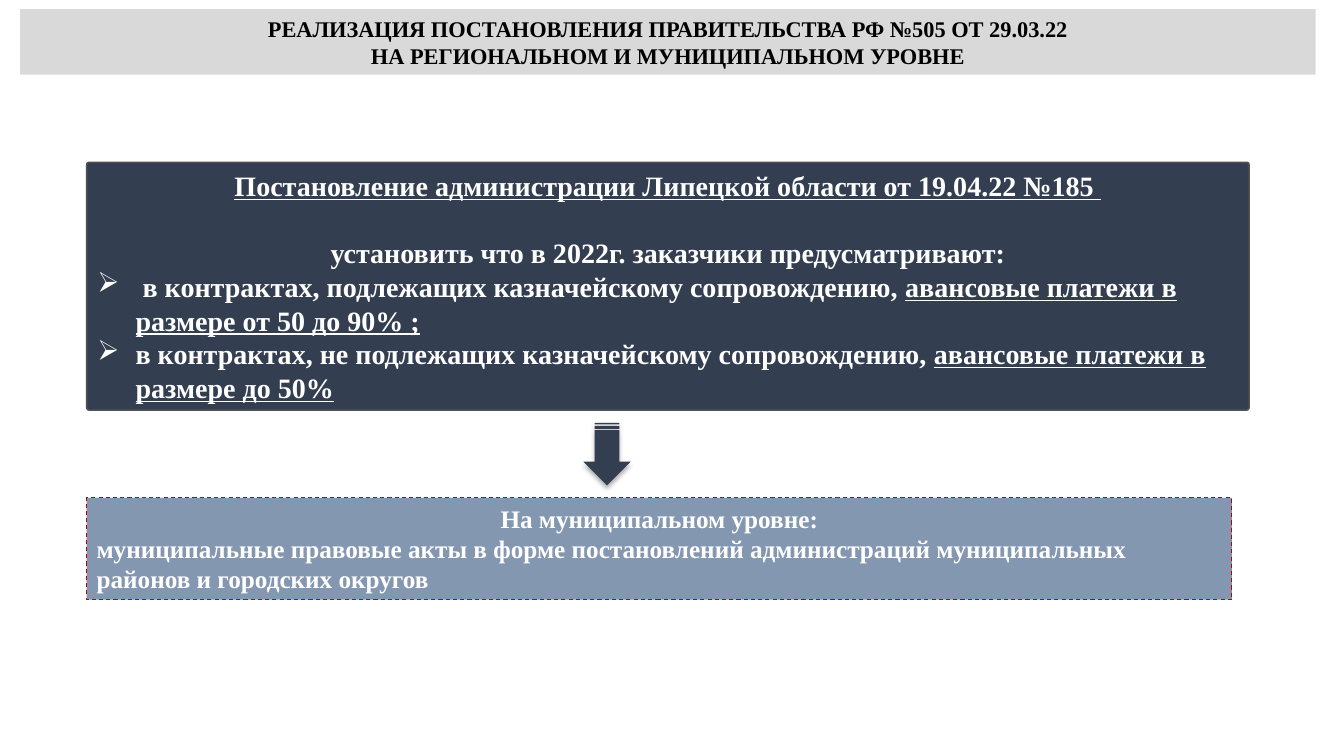
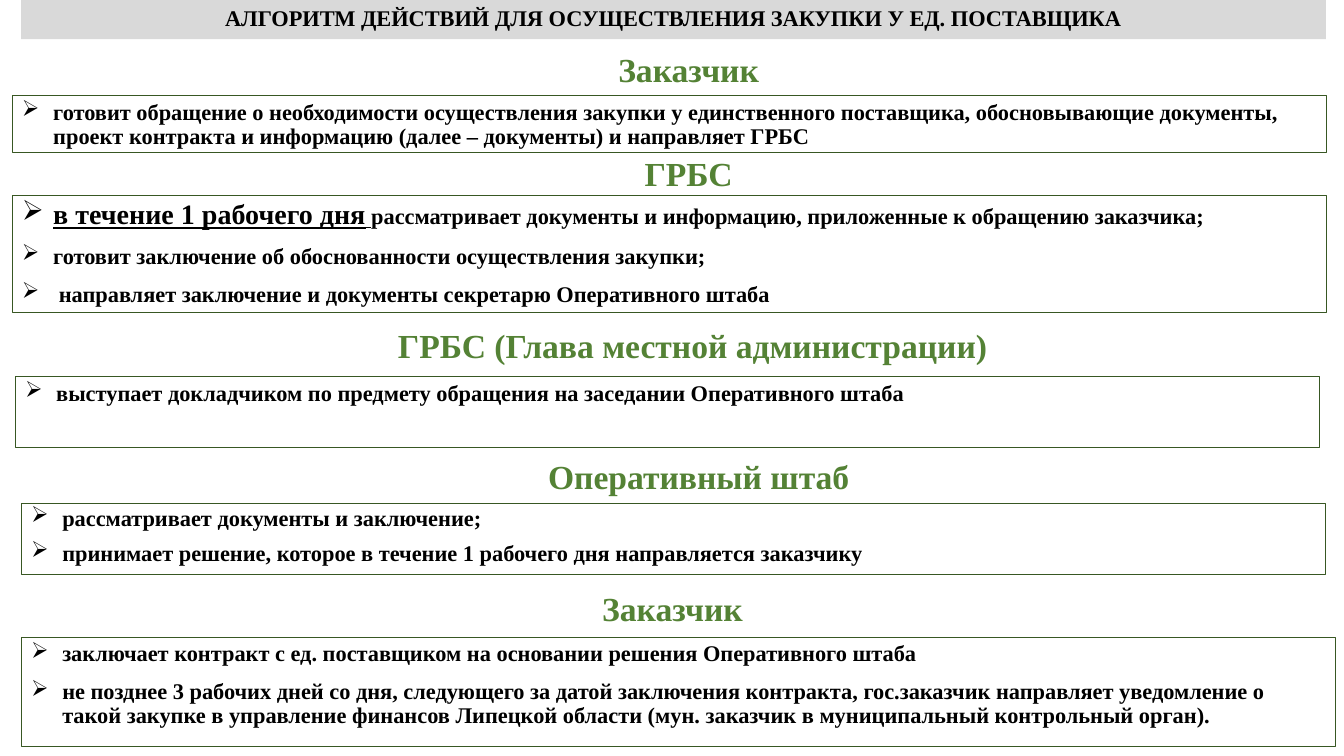
import pptx
import pptx.dml.color
import pptx.enum.dml
import pptx.enum.shapes
import pptx.enum.text
import pptx.oxml.ns
import pptx.util
from lxml import etree

Inches = pptx.util.Inches
Pt = pptx.util.Pt
SHAPES = pptx.enum.shapes.MSO_SHAPE
ALIGN = pptx.enum.text.PP_ALIGN
ANCHOR = pptx.enum.text.MSO_ANCHOR
qn = pptx.oxml.ns.qn

FONT = "Times New Roman"
COLORS = {
    "band": "D9D9D9",
    "text": "000000",
    "light_text": "FFFFFF",
    "decree": "333F50",
    "decree_border": "525252",
    "municipal": "8497B0",
    "municipal_border": "C00000",
    "heading": "548235",
    "step_border": "385723",
}


def rgb(name):
    return pptx.dml.color.RGBColor.from_string(COLORS[name])


# Text
def add_run(paragraph, text, size=16, color="text", underline=False):
    run = paragraph.add_run()
    run.text = text
    run.font.name = FONT
    run.font.size = Pt(size)
    run.font.bold = True
    run.font.underline = underline
    run.font.color.rgb = rgb(color)


def add_bullet(paragraph, indent):
    properties = paragraph._p.get_or_add_pPr()
    properties.set("marL", str(Inches(indent)))
    properties.set("indent", str(-Inches(indent)))
    etree.SubElement(properties, qn("a:buChar")).set("char", "➢")


def add_text(shape, parts, align=ALIGN.LEFT, line_spacing=None,
             space_before=0, indent=None, **run_format):
    """Add a paragraph; parts is a string or a list of (text, run format)."""
    frame = shape.text_frame
    paragraph = frame.paragraphs[0]
    if paragraph.runs:
        paragraph = frame.add_paragraph()
    paragraph.alignment = align
    paragraph.space_before = Pt(space_before)
    if line_spacing:
        paragraph.line_spacing = line_spacing
    if indent:
        add_bullet(paragraph, indent)
    if isinstance(parts, str):
        parts = [(parts, {})]
    for text, own_format in parts:
        add_run(paragraph, text, **{**run_format, **own_format})


# Shapes
def add_box(slide, left, top, width, height, fill=None, line=None,
            line_width=0.75, kind=SHAPES.RECTANGLE, anchor=ANCHOR.TOP):
    shape = slide.shapes.add_shape(
        kind, Inches(left), Inches(top), Inches(width), Inches(height))
    shape.shadow.inherit = False
    if fill:
        shape.fill.solid()
        shape.fill.fore_color.rgb = rgb(fill)
    else:
        shape.fill.background()
    if line:
        shape.line.color.rgb = rgb(line)
        shape.line.width = Pt(line_width)
    else:
        shape.line.fill.background()
    shape.text_frame.word_wrap = True
    shape.text_frame.vertical_anchor = anchor
    return shape


def add_title_band(slide, lines, left, top, width, height, line_spacing=None):
    band = add_box(slide, left, top, width, height, fill="band", anchor=ANCHOR.MIDDLE)
    for line in lines:
        add_text(band, line, align=ALIGN.CENTER, line_spacing=line_spacing)


def add_heading(slide, text, left, top):
    heading = slide.shapes.add_textbox(Inches(left), Inches(top), Inches(10), Inches(0.46))
    heading.text_frame.word_wrap = True
    add_text(heading, text, align=ALIGN.CENTER, line_spacing=0.9,
             space_before=10, size=24, color="heading")


def add_step(slide, items, left, top, width, height, line_spacing=0.9):
    box = add_box(slide, left, top, width, height, line="step_border")
    for item in items:
        add_text(box, item, indent=0.31, line_spacing=line_spacing, space_before=10)


def add_soft_shadow(shape):
    effects = shape.element.spPr.find(qn("a:effectLst"))
    shadow = etree.SubElement(effects, qn("a:outerShdw"))
    for name, value in (("blurRad", Pt(3.5)), ("dist", Pt(2.2)),
                        ("dir", 90 * 60000), ("rotWithShape", 0)):
        shadow.set(name, str(int(value)))
    color = etree.SubElement(shadow, qn("a:srgbClr"))
    color.set("val", COLORS["text"])
    etree.SubElement(color, qn("a:alpha")).set("val", "32000")


# Slides
def build_decree_slide(slide):
    add_title_band(slide, ["РЕАЛИЗАЦИЯ ПОСТАНОВЛЕНИЯ ПРАВИТЕЛЬСТВА РФ №505 ОТ 29.03.22",
                           "НА РЕГИОНАЛЬНОМ И МУНИЦИПАЛЬНОМ УРОВНЕ"],
                   0.2, 0.09, 12.85, 0.65)

    # Regional decree
    decree = add_box(slide, 0.86, 1.61, 11.53, 2.46, fill="decree",
                     line="decree_border", line_width=1,
                     kind=SHAPES.ROUNDED_RECTANGLE, anchor=ANCHOR.MIDDLE)
    decree.adjustments[0] = 0.01
    decree_text = {"size": 20, "color": "light_text"}
    underlined = {"underline": True}
    add_text(decree, "Постановление администрации Липецкой области от 19.04.22 №185 ",
             align=ALIGN.CENTER, underline=True, **decree_text)
    add_text(decree, "установить что в 2022г. заказчики предусматривают:",
             align=ALIGN.CENTER, space_before=24, **decree_text)
    for condition, payment in (
            (" в контрактах, подлежащих казначейскому сопровождению, ",
             "авансовые платежи в размере от 50 до 90% ;"),
            ("в контрактах, не подлежащих казначейскому сопровождению, ",
             "авансовые платежи в размере до 50%")):
        add_text(decree, [(condition, {}), (payment, underlined)],
                 indent=0.38, **decree_text)

    # Arrow to the municipal level
    arrow = add_box(slide, 5.71, 4.27, 0.62, 0.47, fill="decree",
                    kind=SHAPES.STRIPED_RIGHT_ARROW)
    arrow.adjustments[0] = 0.52
    arrow.rotation = 90
    add_soft_shadow(arrow)

    # Municipal level
    municipal = add_box(slide, 0.86, 4.94, 11.36, 1.01,
                        fill="municipal", line="municipal_border")
    municipal.line.dash_style = pptx.enum.dml.MSO_LINE.DASH
    add_text(municipal, "На муниципальном уровне:",
             align=ALIGN.CENTER, size=18, color="light_text")
    add_text(municipal, "муниципальные правовые акты в форме постановлений администраций "
             "муниципальных районов и городских округов", size=18, color="light_text")


def build_algorithm_slide(slide):
    add_title_band(slide, ["АЛГОРИТМ ДЕЙСТВИЙ ДЛЯ ОСУЩЕСТВЛЕНИЯ ЗАКУПКИ У ЕД. ПОСТАВЩИКА"],
                   0.21, -0.01, 12.94, 0.4, line_spacing=0.9)

    # Each step: heading, its position, box position and size, line spacing, items
    steps = [
        ("Заказчик", (1.83, 0.48), (0.12, 0.95, 13.04, 0.56), 0.9, [
            "готовит обращение о необходимости осуществления закупки у единственного "
            "поставщика, обосновывающие документы, проект контракта и информацию "
            "(далее – документы) и направляет ГРБС"]),
        ("ГРБС", (1.83, 1.51), (0.12, 1.94, 13.04, 1.16), 0.9, [
            [("в течение 1 рабочего дня", {"size": 20, "underline": True}),
             (" ", {"underline": True}),
             ("рассматривает документы и информацию, приложенные к обращению заказчика;", {})],
            "готовит заключение об обоснованности осуществления закупки;",
            " направляет заключение и документы секретарю Оперативного штаба"]),
        ("ГРБС (Глава местной администрации)", (1.87, 3.22), (0.15, 3.74, 12.94, 0.7), 0.9, [
            "выступает докладчиком по предмету обращения на заседании Оперативного штаба"]),
        ("Оперативный штаб", (1.93, 4.52), (0.21, 5, 12.94, 0.7), 0.8, [
            "рассматривает документы и заключение;",
            "принимает решение, которое в течение 1 рабочего дня направляется заказчику"]),
        ("Заказчик", (1.67, 5.83), (0.21, 6.32, 13.04, 1.09), 0.9, [
            "заключает контракт с ед. поставщиком на основании решения Оперативного штаба",
            "не позднее 3 рабочих дней со дня, следующего за датой заключения контракта, "
            "гос.заказчик направляет уведомление о такой закупке в управление финансов "
            "Липецкой области (мун. заказчик в муниципальный контрольный орган)."]),
    ]
    for heading, heading_position, box, line_spacing, items in steps:
        add_heading(slide, heading, *heading_position)
        add_step(slide, items, *box, line_spacing=line_spacing)


def main():
    presentation = pptx.Presentation()
    presentation.slide_width = Inches(13.33)
    presentation.slide_height = Inches(7.5)
    blank_layout = presentation.slide_layouts[6]
    for build_slide in (build_decree_slide, build_algorithm_slide):
        build_slide(presentation.slides.add_slide(blank_layout))
    presentation.save("out.pptx")


if __name__ == "__main__":
    main()
